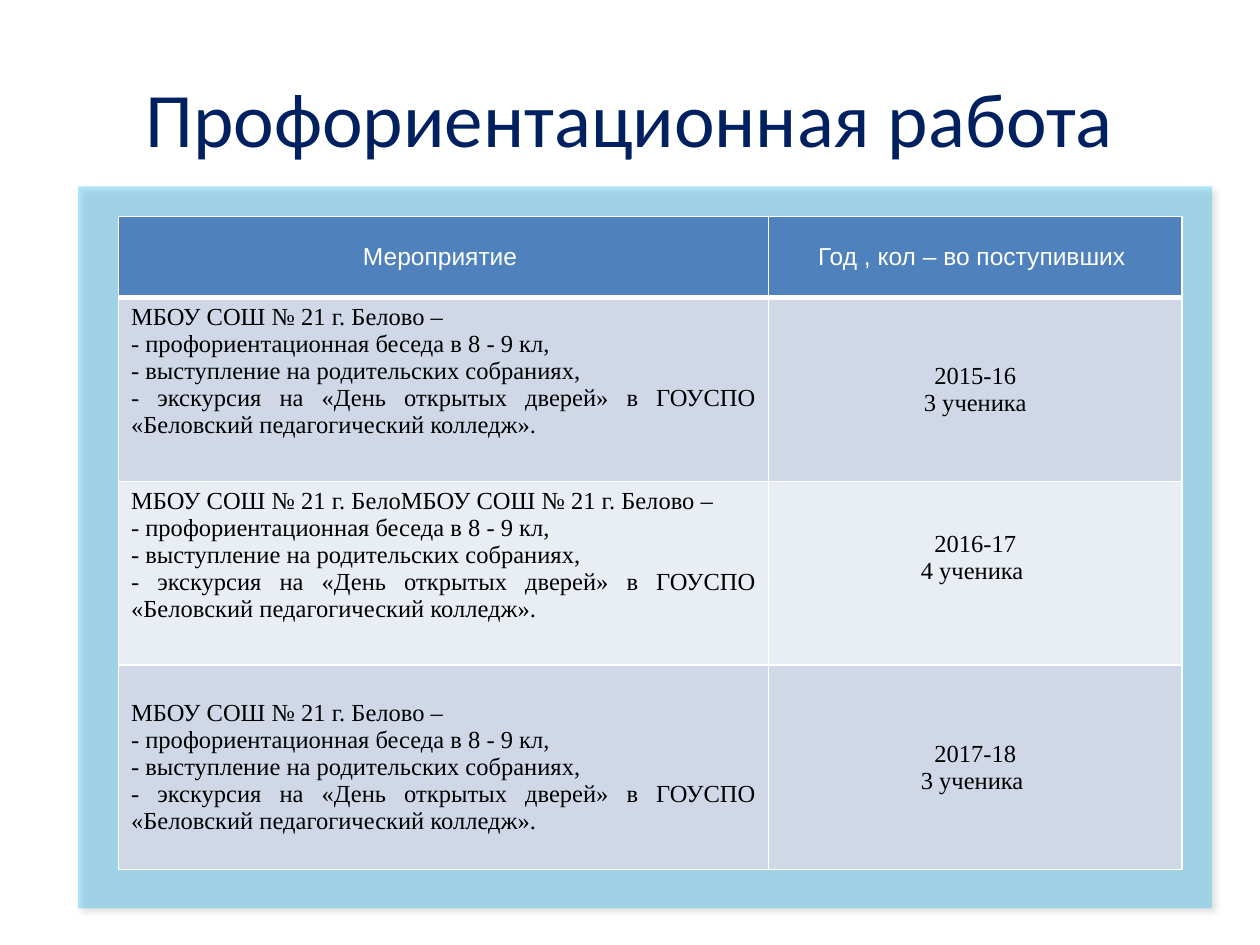
from lxml import etree
from pptx import Presentation
from pptx.dml.color import RGBColor
from pptx.enum.shapes import MSO_SHAPE
from pptx.enum.text import MSO_ANCHOR, PP_ALIGN
from pptx.oxml.ns import qn
from pptx.util import Inches, Pt

RECTANGLE = MSO_SHAPE.RECTANGLE
TOP, MIDDLE = MSO_ANCHOR.TOP, MSO_ANCHOR.MIDDLE
CENTER, JUSTIFY = PP_ALIGN.CENTER, PP_ALIGN.JUSTIFY

COLORS = {
    "title": "002060",
    "panel": "00B0F0",
    "header": "4F81BD",
    "band_dark": "D0D8E8",
    "band_light": "E9EDF4",
    "white": "FFFFFF",
    "black": "000000",
}
TITLE_FONT = {"name": "Calibri", "size": Pt(44), "color": "title"}
HEADER_FONT = {"name": "Arial", "size": Pt(14), "bold": False, "color": "white"}
BODY_FONT = {"name": "Times New Roman", "size": Pt(14), "bold": False, "color": "black"}

COLUMN_WIDTHS = [5.16, 3.28]
ROW_HEIGHTS = [0.64, 1.46, 1.46, 1.62]
HEADERS = ["Мероприятие ", "Год , кол – во поступивших "]
ACTIVITIES = [
    "- профориентационная беседа в 8 - 9 кл, ",
    "- выступление на родительских собраниях, ",
    "- экскурсия на «День открытых дверей» в ГОУСПО «Беловский педагогический колледж». ",
]
# School, year, number admitted, anchor of the activities, bottom margin of the result
YEARS = [
    ("МБОУ СОШ № 21 г. Белово – ", "2015-16", "3 ученика", TOP, 0.05),
    ("МБОУ СОШ № 21 г. БелоМБОУ СОШ № 21 г. Белово – ", "2016-17", "4 ученика ", TOP, 0.29),
    ("МБОУ СОШ № 21 г. Белово – ", "2017-18", "3 ученика ", MIDDLE, 0.05),
]


def rgb(color):
    return RGBColor.from_string(COLORS[color])


def add_color(parent, color, alpha=None):
    element = etree.SubElement(parent, qn("a:srgbClr"), val=COLORS[color])
    if alpha is not None:
        etree.SubElement(element, qn("a:alpha"), val=str(alpha * 1000))


def write_paragraphs(text_frame, lines, alignment, font_format):
    for index, line in enumerate(lines):
        paragraph = text_frame.paragraphs[0] if index == 0 else text_frame.add_paragraph()
        paragraph.alignment = alignment
        run = paragraph.add_run()
        run.text = line
        for attribute, value in font_format.items():
            if attribute == "color":
                run.font.color.rgb = rgb(value)
            else:
                setattr(run.font, attribute, value)


def add_title(slide):
    title = slide.shapes.title
    title.left, title.top, title.width, title.height = map(Inches, (0.5, 0.3, 9, 1.25))
    title.text_frame.vertical_anchor = MIDDLE
    write_paragraphs(title.text_frame, ["Профориентационная работа"], CENTER, TITLE_FONT)


def add_panel(slide):
    """Translucent backing rectangle with a soft shadow to the lower right."""
    panel = slide.shapes.add_shape(RECTANGLE, *map(Inches, (0.62, 1.48, 9, 5.73)))
    panel.shadow.inherit = False
    panel.line.fill.background()
    panel.fill.solid()
    panel.fill.fore_color.rgb = rgb("panel")
    fill_color = panel.element.spPr.find(qn("a:solidFill"))[0]
    etree.SubElement(fill_color, qn("a:alpha"), val="29000")
    effects = panel.element.spPr.find(qn("a:effectLst"))
    shadow = etree.SubElement(
        effects, qn("a:outerShdw"), blurRad=str(Pt(4)), dist=str(Pt(3)),
        dir=str(45 * 60000), algn="tl", rotWithShape="0")
    add_color(shadow, "black", 40)


def set_borders(cell, bottom_width):
    properties = cell._tc.get_or_add_tcPr()
    widths = {"lnL": 1, "lnR": 1, "lnT": 1, "lnB": bottom_width}
    for index, (side, width) in enumerate(widths.items()):
        line = etree.Element(qn(f"a:{side}"), w=str(Pt(width)))
        add_color(etree.SubElement(line, qn("a:solidFill")), "white")
        properties.insert(index, line)


def fill_cell(cell, lines, fill, font_format, alignment=CENTER, anchor=MIDDLE, bottom_border=1):
    cell.fill.solid()
    cell.fill.fore_color.rgb = rgb(fill)
    cell.vertical_anchor = anchor
    set_borders(cell, bottom_border)
    write_paragraphs(cell.text_frame, lines, alignment, font_format)


def add_results_table(slide):
    table = slide.shapes.add_table(
        len(ROW_HEIGHTS), len(COLUMN_WIDTHS), Inches(0.94), Inches(1.72),
        Inches(sum(COLUMN_WIDTHS)), Inches(sum(ROW_HEIGHTS))).table
    for column, width in zip(table.columns, COLUMN_WIDTHS):
        column.width = Inches(width)
    for row, height in zip(table.rows, ROW_HEIGHTS):
        row.height = Inches(height)

    for column_index, header in enumerate(HEADERS):
        fill_cell(table.cell(0, column_index), [header], "header", HEADER_FONT, bottom_border=3)
    for row_index, (school, year, admitted, anchor, bottom_margin) in enumerate(YEARS, start=1):
        band = "band_dark" if row_index % 2 else "band_light"
        fill_cell(table.cell(row_index, 0), [school, *ACTIVITIES], band, BODY_FONT, JUSTIFY, anchor)
        result = table.cell(row_index, 1)
        fill_cell(result, [year, admitted], band, BODY_FONT)
        result.margin_bottom = Inches(bottom_margin)


def main():
    presentation = Presentation()
    presentation.slide_width = Inches(10)
    presentation.slide_height = Inches(7.5)
    slide = presentation.slides.add_slide(presentation.slide_layouts.get_by_name("Title Only"))
    add_title(slide)
    add_panel(slide)
    add_results_table(slide)
    presentation.save("out.pptx")


if __name__ == "__main__":
    main()
